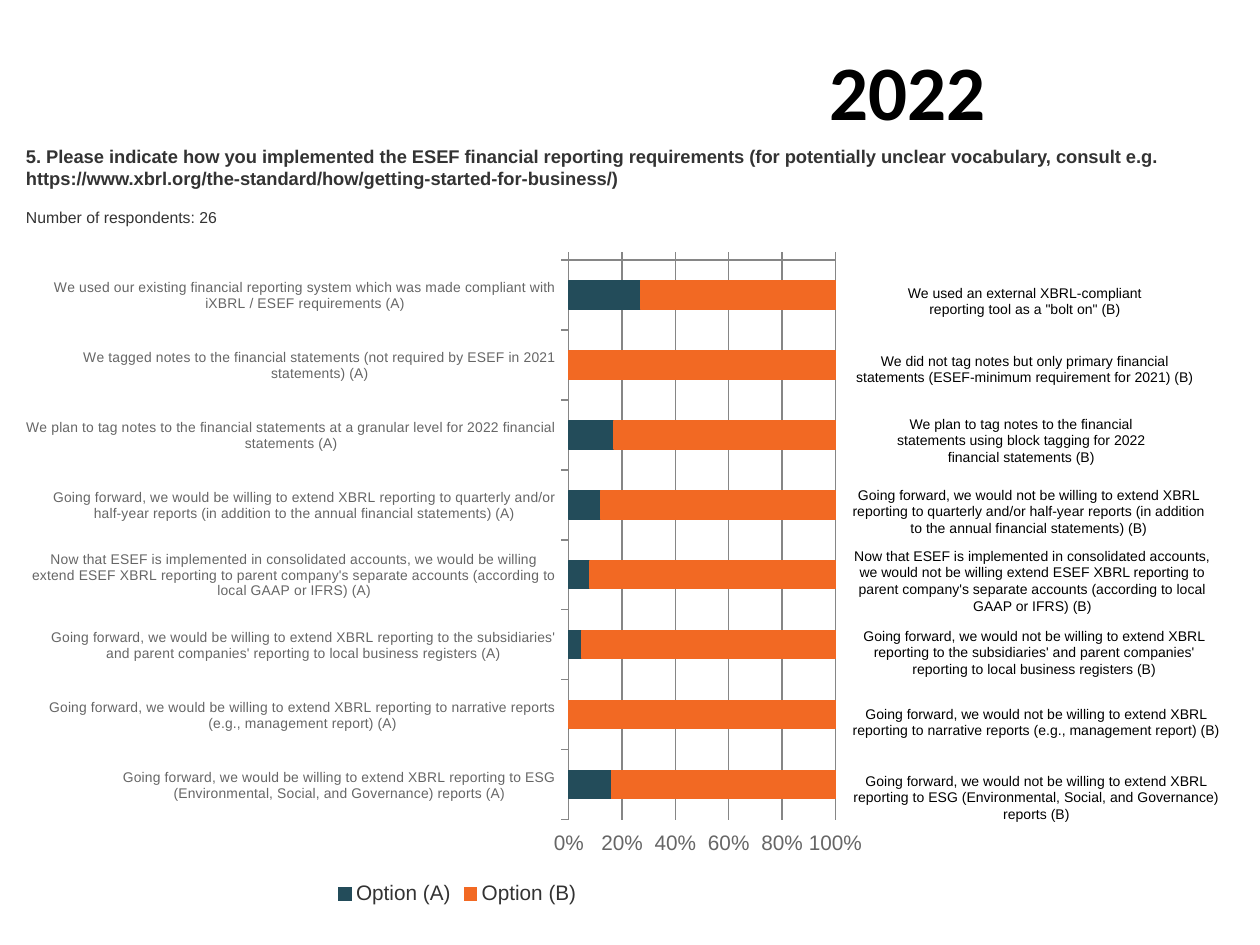
from dataclasses import dataclass

from lxml import etree
from pptx import Presentation
from pptx import util as u
from pptx.chart import data as chart_data
from pptx.dml import color
from pptx.enum import chart as charts
from pptx.enum import text
from pptx.oxml import ns

PX_PER_INCH = 126


@dataclass(frozen=True)
class Theme:
    ink: str = "000000"
    heading: str = "333333"
    axis_text: str = "666666"
    axis_line: str = "868686"
    option_a: str = "234C5A"
    option_b: str = "F26923"
    body_font: str = "Arial"
    year_font: str = "Calibri"
    year_size: float = 44
    question_size: float = 10.5
    respondents_size: float = 9
    label_size: float = 8
    scale_size: float = 12


THEME = Theme()


@dataclass(frozen=True)
class Box:
    left: int
    top: int
    width: int
    height: int


@dataclass(frozen=True)
class TextItem:
    box: Box
    words: str
    size: float = THEME.label_size
    colour: str = THEME.ink
    font: str = THEME.body_font
    bold: bool = False
    centred: bool = True


@dataclass(frozen=True)
class Answer:
    option_a: str
    share_a: float
    option_b: str
    box_b: Box


HEADINGS = (
    TextItem(Box(26, 145, 1207, 44),
             "5. Please indicate how you implemented the ESEF financial reporting requirements "
             "(for potentially unclear vocabulary, consult e.g. "
             "https://www.xbrl.org/the-standard/how/getting-started-for-business/)",
             THEME.question_size, THEME.heading, bold=True, centred=False),
    TextItem(Box(26, 208, 1207, 19), "Number of respondents: 26",
             THEME.respondents_size, THEME.heading, centred=False),
    TextItem(Box(759, 37, 297, 106), "2022", THEME.year_size, font=THEME.year_font, bold=True),
)

WILLING = "Going forward, we would be willing to extend XBRL reporting to "
UNWILLING = "Going forward, we would not be willing to extend XBRL reporting to "

ANSWERS = (
    Answer("We used our existing financial reporting system which was made compliant with "
           "iXBRL / ESEF requirements (A)", 0.27,
           "We used an external XBRL-compliant reporting tool as a \"bolt on\" (B)",
           Box(874, 278, 302, 47)),
    Answer("We tagged notes to the financial statements (not required by ESEF in 2021 "
           "statements) (A)", 0,
           "We did not tag notes but only primary financial statements "
           "(ESEF-minimum requirement for 2021) (B)", Box(836, 346, 378, 47)),
    Answer("We plan to tag notes to the financial statements at a granular level for 2022 "
           "financial statements (A)", 0.17,
           "We plan to tag notes to the financial statements using block tagging for 2022 "
           "financial statements (B)", Box(869, 409, 305, 63)),
    Answer(WILLING + "quarterly and/or half-year reports (in addition to the annual "
           "financial statements) (A)", 0.12,
           UNWILLING + "quarterly and/or half-year reports (in addition to the annual "
           "financial statements) (B)", Box(840, 480, 378, 63)),
    Answer("Now that ESEF is implemented in consolidated accounts, we would be willing extend "
           "ESEF XBRL reporting to parent company's separate accounts (according to local "
           "GAAP or IFRS) (A)", 0.08,
           "Now that ESEF is implemented in consolidated accounts, we would not be willing "
           "extend ESEF XBRL reporting to parent company's separate accounts (according to "
           "local GAAP or IFRS) (B)", Box(836, 541, 393, 81)),
    Answer(WILLING + "the subsidiaries' and parent companies' reporting to local business "
           "registers (A)", 0.05,
           UNWILLING + "the subsidiaries' and parent companies' reporting to local business "
           "registers (B)", Box(840, 621, 389, 63)),
    Answer(WILLING + "narrative reports (e.g., management report) (A)", 0,
           UNWILLING + "narrative reports (e.g., management report) (B)",
           Box(840, 699, 393, 63)),
    Answer(WILLING + "ESG (Environmental, Social, and Governance) reports (A)", 0.16,
           UNWILLING + "ESG (Environmental, Social, and Governance) reports (B)",
           Box(840, 766, 393, 63)),
)

CHART_BOX = Box(26, 247, 853, 663)
PLOT_BOX = Box(565, 260, 270, 560)


def px(length: int) -> u.Emu:
    return u.Emu(round(length * u.Inches(1) / PX_PER_INCH))


def place(box: Box) -> tuple:
    return px(box.left), px(box.top), px(box.width), px(box.height)


def set_all(target, values: dict) -> None:
    for name, value in values.items():
        setattr(target, name, value)


def set_font(font, size: float, colour: str, name: str = THEME.body_font,
             bold: bool = False) -> None:
    set_all(font, {"size": u.Pt(size), "name": name, "bold": bold})
    font.color.rgb = color.RGBColor.from_string(colour)


def set_line(line, colour: str) -> None:
    line.color.rgb = color.RGBColor.from_string(colour)
    line.width = u.Pt(0.75)


def draw_text(page, item: TextItem) -> None:
    frame = page.shapes.add_textbox(*place(item.box)).text_frame
    set_all(frame, {"word_wrap": True, "auto_size": text.MSO_AUTO_SIZE.SHAPE_TO_FIT_TEXT})
    if not item.centred:
        set_all(frame, dict.fromkeys(
            ("margin_left", "margin_top", "margin_right", "margin_bottom"), 0))
    para = frame.paragraphs[0]
    para.alignment = text.PP_ALIGN.CENTER if item.centred else text.PP_ALIGN.LEFT
    span = para.add_run()
    span.text = item.words
    set_font(span.font, item.size, item.colour, item.font, item.bold)


def fix_plot_area(chart, outer: Box, inner: Box) -> None:
    """Pin the bars' rectangle to a share of the chart frame."""
    area = chart.plots[0]._element.getparent()
    for old in area.findall(ns.qn("c:layout")):
        area.remove(old)
    layout = etree.Element(ns.qn("c:layout"))
    manual = etree.SubElement(layout, ns.qn("c:manualLayout"))
    settings = {
        "layoutTarget": "inner", "xMode": "edge", "yMode": "edge",
        "x": (inner.left - outer.left) / outer.width,
        "y": (inner.top - outer.top) / outer.height,
        "w": inner.width / outer.width,
        "h": inner.height / outer.height,
    }
    for name, value in settings.items():
        etree.SubElement(manual, ns.qn(f"c:{name}")).set("val", str(value))
    area.insert(0, layout)


def draw_chart(page, answers: tuple[Answer, ...]) -> None:
    data = chart_data.CategoryChartData(number_format="0%")
    data.categories = [answer.option_a for answer in answers]
    data.add_series("Option (A)", [answer.share_a for answer in answers])
    data.add_series("Option (B)", [round(1 - answer.share_a, 2) for answer in answers])
    chart = page.shapes.add_chart(
        charts.XL_CHART_TYPE.BAR_STACKED, *place(CHART_BOX), data).chart
    set_all(chart, {"has_title": False, "has_legend": True})
    set_all(chart.legend, {"position": charts.XL_LEGEND_POSITION.BOTTOM,
                           "include_in_layout": False})
    set_font(chart.legend.font, THEME.scale_size, THEME.heading)

    plot = chart.plots[0]
    set_all(plot, {"gap_width": 150, "overlap": 100, "vary_by_categories": False})
    for series, colour in zip(plot.series, (THEME.option_a, THEME.option_b)):
        series.format.fill.solid()
        series.format.fill.fore_color.rgb = color.RGBColor.from_string(colour)
        set_line(series.format.line, colour)

    labels, scale = chart.category_axis, chart.value_axis
    set_all(labels, {"reverse_order": True,
                     "tick_label_position": charts.XL_TICK_LABEL_POSITION.LOW})
    set_all(scale, {"minimum_scale": 0, "maximum_scale": 1, "major_unit": 0.2,
                    "has_major_gridlines": True,
                    "tick_label_position": charts.XL_TICK_LABEL_POSITION.HIGH})
    set_all(scale.tick_labels, {"number_format": "0%", "number_format_is_linked": False})
    set_line(scale.major_gridlines.format.line, THEME.axis_line)
    for axis, size in ((labels, THEME.label_size), (scale, THEME.scale_size)):
        axis.major_tick_mark = charts.XL_TICK_MARK.OUTSIDE
        set_line(axis.format.line, THEME.axis_line)
        set_font(axis.tick_labels.font, size, THEME.axis_text)
    fix_plot_area(chart, CHART_BOX, PLOT_BOX)


def main() -> None:
    deck = Presentation()
    set_all(deck, {"slide_width": px(1260), "slide_height": px(945)})
    page = deck.slides.add_slide(deck.slide_layouts[6])
    draw_chart(page, ANSWERS)
    for item in HEADINGS:
        draw_text(page, item)
    for answer in ANSWERS:
        draw_text(page, TextItem(answer.box_b, answer.option_b))
    deck.save("out.pptx")


if __name__ == "__main__":
    main()
